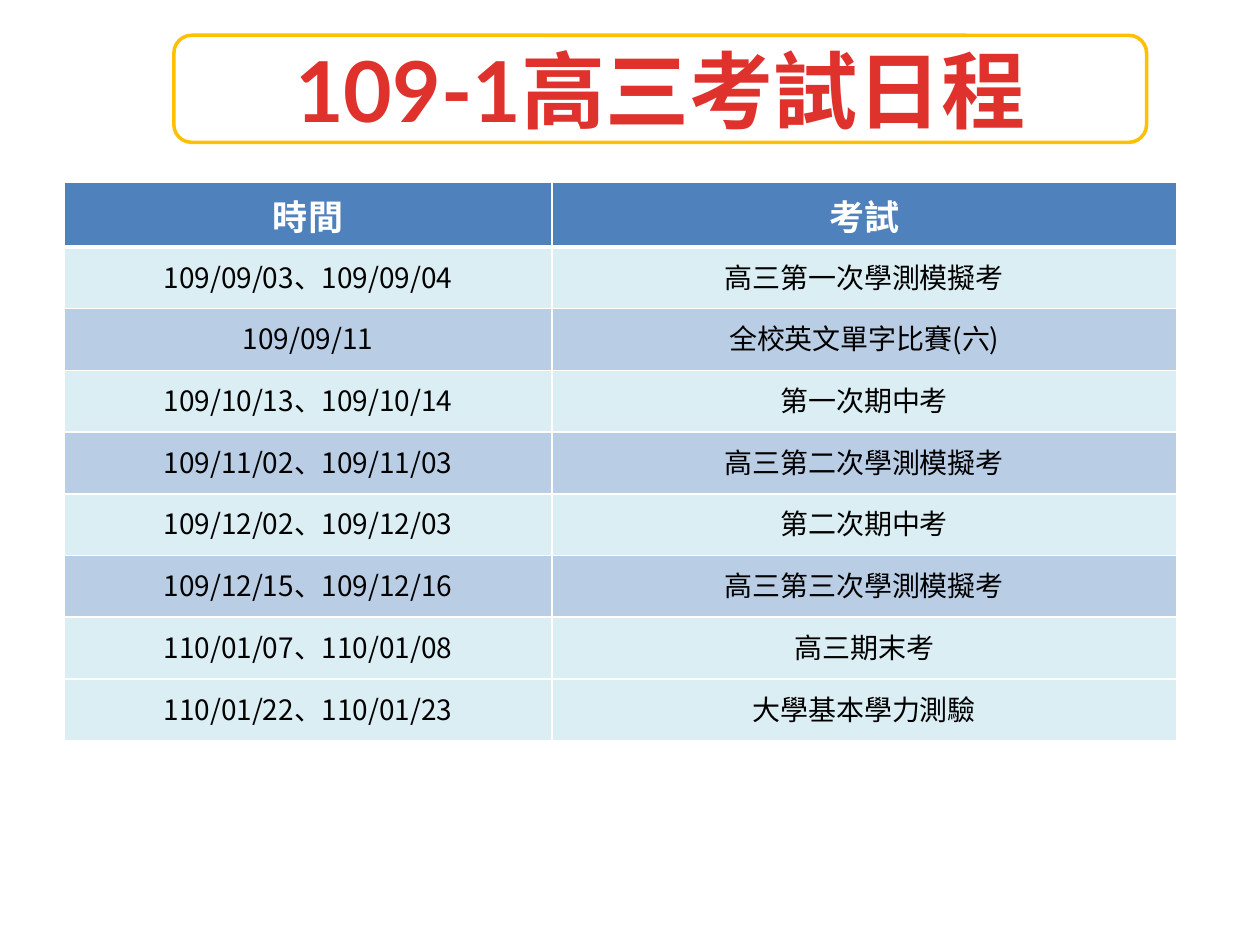
from lxml.etree import SubElement
from pptx import Presentation
from pptx.dml.color import RGBColor
from pptx.enum.shapes import MSO_SHAPE
from pptx.enum.text import MSO_ANCHOR, PP_ALIGN
from pptx.oxml.ns import qn
from pptx.util import Inches, Pt

TITLE = "109-1高三考試日程"
HEADER = ("時間", "考試")
EXAMS = [
    ("109/09/03、109/09/04", "高三第一次學測模擬考"),
    ("109/09/11", "全校英文單字比賽(六)"),
    ("109/10/13、109/10/14", "第一次期中考"),
    ("109/11/02、109/11/03", "高三第二次學測模擬考"),
    ("109/12/02、109/12/03", "第二次期中考"),
    ("109/12/15、109/12/16", "高三第三次學測模擬考"),
    ("110/01/07、110/01/08", "高三期末考"),
    ("110/01/22、110/01/23", "大學基本學力測驗"),
]
BLUE_ROWS = (2, 4, 6)

COLORS = {
    "white": "FFFFFF", "gold": "FFC000", "red": "DF322D", "black": "000000",
    "header": "4F81BD", "pale": "DBEEF4", "blue": "B9CDE5",
}
CJK_FONT = "Noto Sans CJK JP"
TITLE_FONT = {"name": "Lato", "size": Pt(48), "bold": True}
HEADER_FONT = {"name": "Times New Roman", "size": Pt(20), "bold": True}
BODY_FONT = {"name": CJK_FONT, "size": Pt(16), "bold": False}

COLUMN_WIDTHS = (3.87, 4.96)
HEADER_HEIGHT, ROW_HEIGHT = 0.51, 0.49
SIDE_MARGIN = 0.07


def rgb(name):
    return RGBColor.from_string(COLORS[name])


def write_centered(frame, text, font_format, color):
    paragraph = frame.paragraphs[0]
    paragraph.alignment = PP_ALIGN.CENTER
    run = paragraph.add_run()
    run.text = text
    for attribute, value in font_format.items():
        setattr(run.font, attribute, value)
    run.font.color.rgb = rgb(color)
    SubElement(run.font._element, qn("a:ea"), typeface=CJK_FONT)


def add_borders(cell, top, bottom):
    """White borders, with the top and bottom widths in points."""
    properties = cell._tc.get_or_add_tcPr()
    for side, width in (("L", 1), ("R", 1), ("T", top), ("B", bottom)):
        border = SubElement(properties, qn(f"a:ln{side}"), w=str(Pt(width)))
        fill = SubElement(border, qn("a:solidFill"))
        SubElement(fill, qn("a:srgbClr"), val=COLORS["white"])


def add_title(slide):
    banner = slide.shapes.add_shape(
        MSO_SHAPE.ROUNDED_RECTANGLE,
        Inches(1.38), Inches(0.28), Inches(7.72), Inches(0.85))
    banner.shadow.inherit = False
    banner.fill.solid()
    banner.fill.fore_color.rgb = rgb("white")
    white = banner._element.spPr.find(qn("a:solidFill"))[0]
    SubElement(white, qn("a:alpha"), val="42000")
    banner.line.color.rgb = rgb("gold")
    banner.line.width = Pt(2)
    banner.text_frame.word_wrap = True
    banner.text_frame.vertical_anchor = MSO_ANCHOR.MIDDLE
    write_centered(banner.text_frame, TITLE, TITLE_FONT, "red")


def add_schedule(slide):
    rows = [HEADER, *EXAMS]
    heights = [HEADER_HEIGHT] + [ROW_HEIGHT] * len(EXAMS)
    table = slide.shapes.add_table(
        len(rows), len(HEADER), Inches(0.51), Inches(1.45),
        Inches(sum(COLUMN_WIDTHS)), Inches(sum(heights))).table
    for column, width in zip(table.columns, COLUMN_WIDTHS):
        column.width = Inches(width)

    for r, texts in enumerate(rows):
        table.rows[r].height = Inches(heights[r])
        is_header = r == 0
        row_fill = "header" if is_header else "blue" if r in BLUE_ROWS else "pale"
        for c, text in enumerate(texts):
            cell = table.cell(r, c)
            add_borders(cell, top=3 if r == 1 else 1, bottom=3 if is_header else 1)
            cell.fill.solid()
            cell.fill.fore_color.rgb = rgb(row_fill)
            cell.margin_left = cell.margin_right = Inches(SIDE_MARGIN)
            cell.margin_top = cell.margin_bottom = Inches(0 if is_header else SIDE_MARGIN)
            cell.vertical_anchor = MSO_ANCHOR.MIDDLE if is_header else MSO_ANCHOR.TOP
            write_centered(cell.text_frame, text,
                           HEADER_FONT if is_header else BODY_FONT,
                           "white" if is_header else "black")


def main():
    deck = Presentation()
    deck.slide_width, deck.slide_height = Inches(10), Inches(7.5)
    slide = deck.slides.add_slide(deck.slide_layouts[6])
    add_title(slide)
    add_schedule(slide)
    deck.save("out.pptx")


if __name__ == "__main__":
    main()
